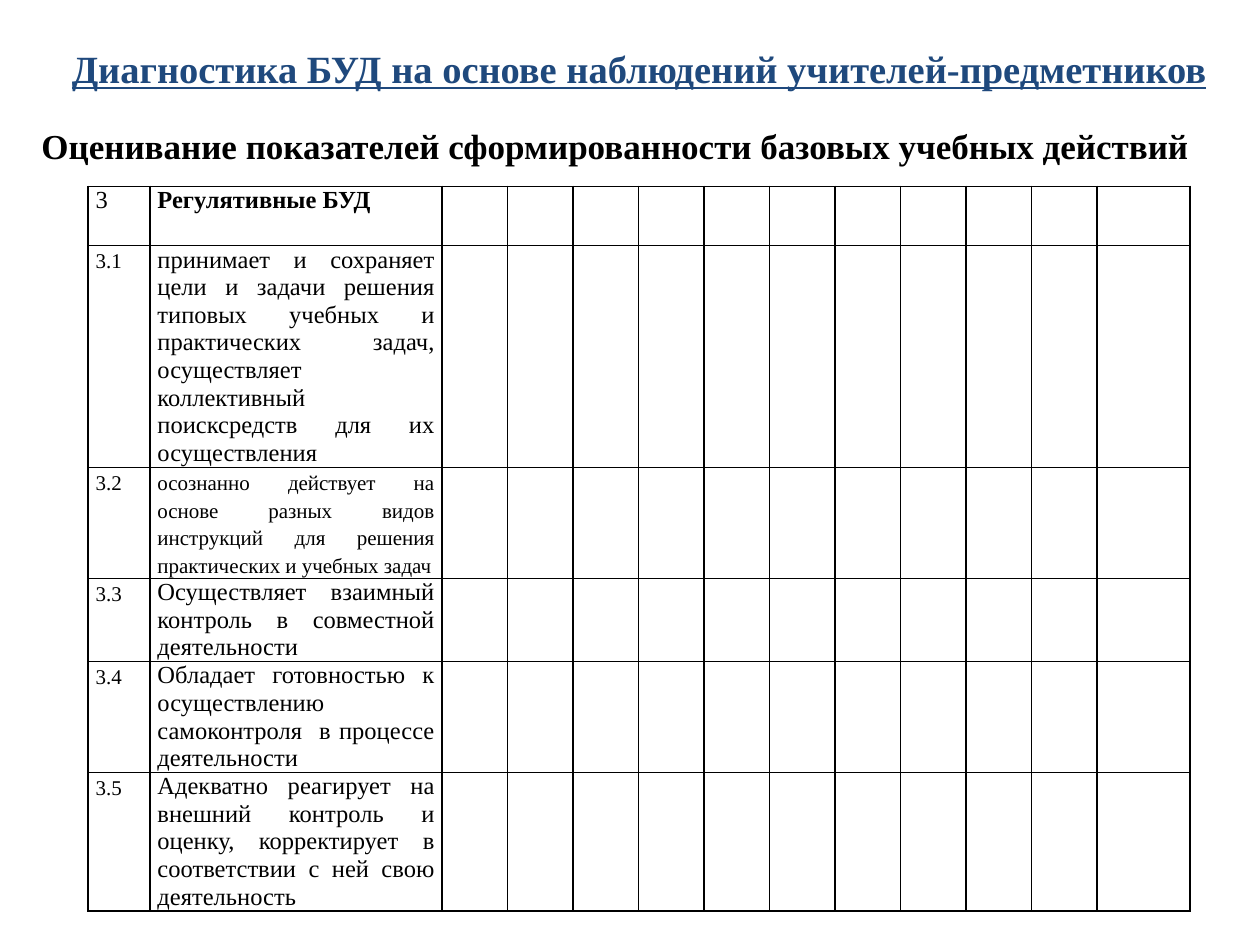
import dataclasses

import pptx
import pptx.dml.color
import pptx.enum.text
import pptx.oxml
import pptx.oxml.ns
import pptx.util
from pptx.util import Inches

ALIGN = pptx.enum.text.PP_ALIGN


@dataclasses.dataclass(frozen=True)
class Theme:
    """Colours, font and type sizes of the slide."""
    font: str = "Times New Roman"
    heading: str = "1F497D"
    ink: str = "000000"
    title_size: int = 22
    subtitle_size: int = 20
    body_size: int = 14
    small_size: int = 12
    line_spacing: float = 15.8
    border_width: int = 1


THEME = Theme()
MARK_COLUMNS = 10
COLUMN_WIDTHS = [0.49, 2.32] + [0.52] * MARK_COLUMNS + [0.74]
INDICATORS = [
    ("3", "Регулятивные БУД", 0.47, {"bold": True}),
    ("3.1", "принимает и сохраняет цели и задачи решения типовых учебных и практических задач, "
            "осуществляет коллективный поисксредств для их осуществления", 1.76, {}),
    ("3.2", "осознанно действует на основе разных видов инструкций для решения "
            "практических и учебных задач", 0.88, {"size": THEME.small_size}),
    ("3.3", "Осуществляет взаимный контроль в совместной деятельности", 0.66, {}),
    ("3.4", "Обладает готовностью к осуществлению самоконтроля  в процессе деятельности", 0.88, {}),
    ("3.5", "Адекватно реагирует на внешний контроль и оценку, корректирует в соответствии "
            "с ней свою деятельность", 1.1, {}),
]


def write_text(frame, text, size=THEME.body_size, color=THEME.ink, bold=False,
               underline=False, align=ALIGN.JUSTIFY, spacing=None):
    """Put one formatted paragraph into a text frame."""
    para = frame.paragraphs[0]
    para.alignment = align
    if spacing:
        para.line_spacing = pptx.util.Pt(spacing)
    span = para.add_run()
    span.text = text
    span.font.name = THEME.font
    span.font.size = pptx.util.Pt(size)
    span.font.bold = bold
    span.font.underline = underline
    span.font.color.rgb = pptx.dml.color.RGBColor.from_string(color)


def place_heading(shape, box, text, **style):
    """Fit a one-line heading shape to its box and write its text."""
    shape.left, shape.top, shape.width, shape.height = map(Inches, box)
    frame = shape.text_frame
    frame.word_wrap = True
    frame.auto_size = pptx.enum.text.MSO_AUTO_SIZE.SHAPE_TO_FIT_TEXT
    frame.vertical_anchor = pptx.enum.text.MSO_ANCHOR.TOP
    write_text(frame, text, bold=True, **style)


def format_cell(cell):
    """Give a cell solid borders, narrow margins and no fill."""
    properties = cell._tc.get_or_add_tcPr()
    width = pptx.util.Pt(THEME.border_width)
    for side in ("lnL", "lnR", "lnT", "lnB"):
        properties.append(pptx.oxml.parse_xml(
            f'<a:{side} {pptx.oxml.ns.nsdecls("a")} w="{width}"><a:solidFill>'
            f'<a:srgbClr val="{THEME.ink}"/></a:solidFill></a:{side}>'))
    cell.fill.background()
    cell.margin_left = cell.margin_right = Inches(0.06)
    cell.margin_top = cell.margin_bottom = 0


def place_indicators(page, box):
    """Draw the table of indicators with empty columns for marks."""
    table = page.shapes.add_table(len(INDICATORS), len(COLUMN_WIDTHS), *map(Inches, box)).table
    table.first_row = table.horz_banding = False
    for column, width in zip(table.columns, COLUMN_WIDTHS):
        column.width = Inches(width)
    for cell in table.iter_cells():
        format_cell(cell)
    for index, (number, text, height, style) in enumerate(INDICATORS):
        table.rows[index].height = Inches(height)
        number_size = THEME.small_size if index else THEME.body_size
        write_text(table.cell(index, 0).text_frame, number, size=number_size,
                   spacing=THEME.line_spacing)
        write_text(table.cell(index, 1).text_frame, text, spacing=THEME.line_spacing, **style)


def main():
    """Build the slide and save the deck."""
    deck = pptx.Presentation()
    deck.slide_width, deck.slide_height = Inches(10), Inches(7.5)
    page = deck.slides.add_slide(deck.slide_layouts.get_by_name("Title Only"))
    place_heading(page.shapes.title, (0.47, 0.31, 9.3, 0.47),
                  "Диагностика БУД на основе наблюдений учителей-предметников",
                  size=THEME.title_size, color=THEME.heading, underline=True, align=ALIGN.LEFT)
    place_heading(page.shapes.add_textbox(0, 0, 0, 0), (0.23, 0.94, 9.61, 0.44),
                  "Оценивание показателей сформированности базовых учебных действий",
                  size=THEME.subtitle_size)
    place_indicators(page, (0.7, 1.48, sum(COLUMN_WIDTHS), sum(row[2] for row in INDICATORS)))
    deck.save("out.pptx")


if __name__ == "__main__":
    main()
